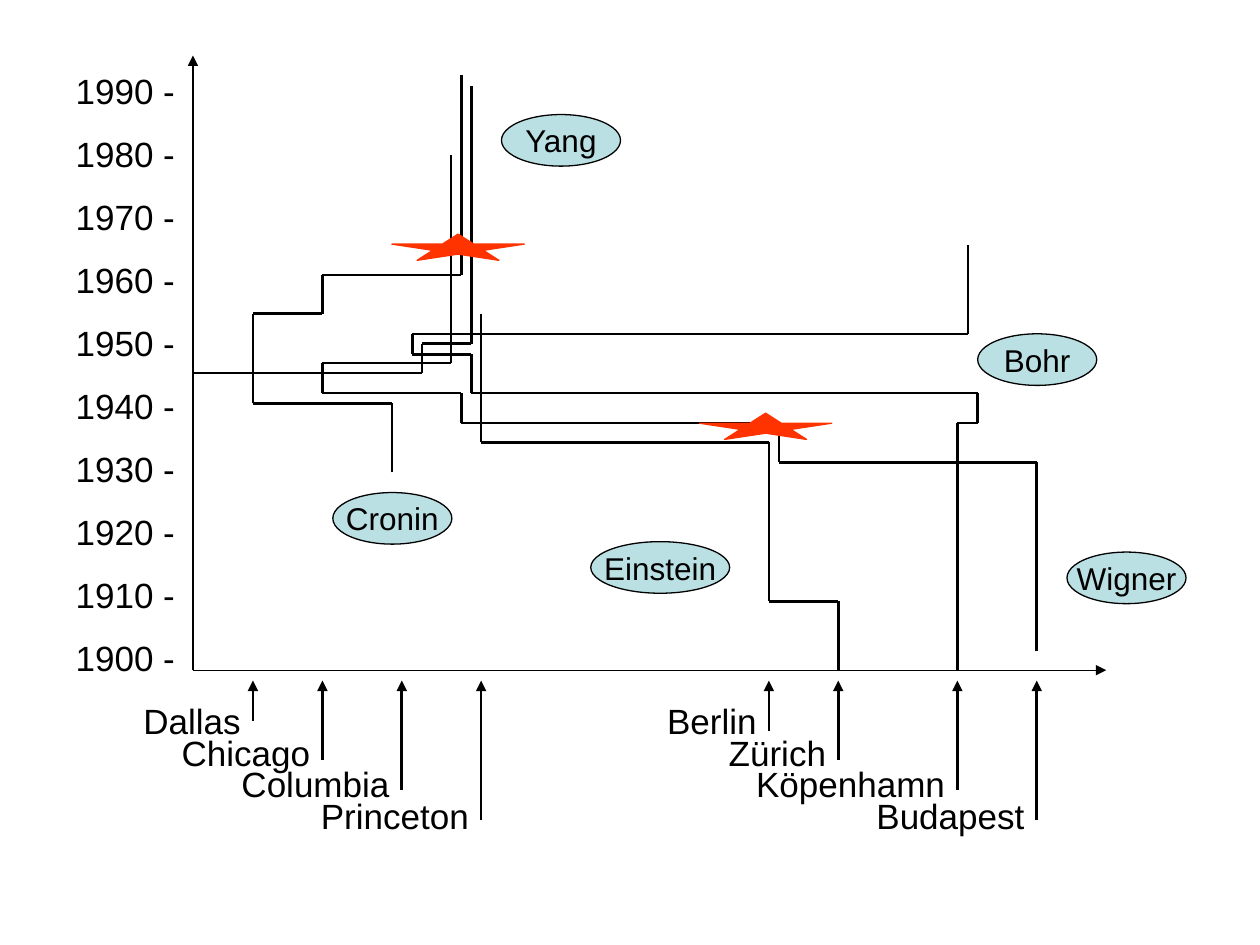
from dataclasses import dataclass

from lxml.etree import SubElement
from pptx import Presentation
from pptx.dml.color import RGBColor
from pptx.enum.shapes import MSO_CONNECTOR, MSO_SHAPE
from pptx.enum.text import MSO_ANCHOR, MSO_AUTO_SIZE, PP_ALIGN
from pptx.oxml.ns import qn
from pptx.util import Cm, Pt


@dataclass(frozen=True)
class Theme:
    font: str = "Arial"
    ink: RGBColor = RGBColor(0x00, 0x00, 0x00)
    bubble: RGBColor = RGBColor(0xBB, 0xE0, 0xE3)
    star: RGBColor = RGBColor(0xFF, 0x33, 0x00)
    label_size: Pt = Pt(20)
    name_size: Pt = Pt(18)
    row_height: Pt = Pt(18)
    thin: Pt = Pt(0.75)
    thick: Pt = Pt(1.5)


THEME = Theme()

# All lengths are in centimetres
AXIS_X, AXIS_Y = 3.89, 13.51
TEXT_LEFT = 1.52
ARROW_TIP = 13.72
LABEL_GAP = 0.25

# City: horizontal position and foot of its arrow
CITIES = {
    "Dallas": (5.1, 14.53), "Chicago": (6.5, 15.32),
    "Columbia": (8.1, 15.93), "Princeton": (9.7, 16.54),
    "Berlin": (15.5, 14.73), "Zürich": (16.9, 15.32),
    "Köpenhamn": (19.3, 15.93), "Budapest": (20.9, 16.54),
}
CITY_ROWS = [("Dallas", "Berlin"), ("Chicago", "Zürich"),
             ("Columbia", "Köpenhamn"), ("Princeton", "Budapest")]
DALLAS, CHICAGO, _, PRINCETON, BERLIN, ZURICH, COPENHAGEN, BUDAPEST = (
    x for x, _ in CITIES.values())

# Start x and y, then each next y and x in turn
ROUTES = {
    "Cronin": (7.9, 9.52, 8.13, DALLAS, 6.32, CHICAGO, 5.54, 9.3, 1.52),
    "Einstein": (ZURICH, AXIS_Y, 12.12, BERLIN, 8.92, PRINCETON, 6.32),
    "Bohr": (COPENHAGEN, AXIS_Y, 8.53, 19.71, 7.92, 9.5, 7.14, 8.31, 6.73,
             19.51, 4.93),
    "Wigner": (BUDAPEST, 13.13, 9.32, 15.7, 8.53, 9.3, 7.92, CHICAGO, 7.32,
               9.09, 3.12),
    "Yang": (9.5, 1.73, 6.93, 8.51, 7.52, AXIS_X),
}

# Name bubbles: left, top, width
BUBBLES = {
    "Bohr": (19.71, 6.73, 2.4), "Einstein": (11.91, 10.92, 2.8),
    "Cronin": (6.71, 9.93, 2.4), "Yang": (10.11, 2.31, 2.4),
    "Wigner": (21.51, 11.13, 2.4),
}
STARS = [(14.1, 8.33), (7.9, 4.72)]


def format_runs(paragraph, size):
    for run in paragraph.runs:
        run.font.name = THEME.font
        run.font.size = size
        run.font.color.rgb = THEME.ink


def add_tab_stops(paragraph, positions):
    tabs = SubElement(paragraph._p.get_or_add_pPr(), qn("a:tabLst"))
    for position in positions:
        SubElement(tabs, qn("a:tab"), pos=str(int(Cm(position))), algn="r")


def fill_labels(title):
    """Years down the axis, then the staggered city names."""
    title.left, title.top = Cm(1.27), Cm(0.86)
    title.width, title.height = Cm(22.86), Cm(17.07)
    frame = title.text_frame
    frame.auto_size = MSO_AUTO_SIZE.NONE
    frame.vertical_anchor = MSO_ANCHOR.TOP
    frame.margin_top = Cm(0.76)

    years = [f"{year} -" for year in range(1990, 1890, -10)]
    city_lines = ["\t" + "\t".join(row) for row in CITY_ROWS]
    frame.text = "\n".join(years + city_lines)
    for index, label in enumerate(frame.paragraphs):
        spaced = 0 < index <= len(years)
        label.alignment = PP_ALIGN.LEFT
        label.line_spacing = THEME.row_height
        label.space_before = THEME.row_height if spaced else Pt(0)
        format_runs(label, THEME.label_size)
    for label, row in zip(frame.paragraphs[len(years):], CITY_ROWS):
        add_tab_stops(label, [CITIES[city][0] - LABEL_GAP - TEXT_LEFT
                              for city in row])


def add_line(slide, start, end, width, arrow=False):
    line = slide.shapes.add_connector(
        MSO_CONNECTOR.STRAIGHT, *map(Cm, start), *map(Cm, end))
    line.line.color.rgb = THEME.ink
    line.line.width = width
    if arrow:
        SubElement(line.line._get_or_add_ln(), qn("a:tailEnd"), type="triangle")
    SubElement(line._element.spPr, qn("a:effectLst"))


def add_route(slide, x, y, *turns):
    """Right-angled path that begins with a vertical stretch."""
    for index, turn in enumerate(turns):
        corner = (turn, y) if index % 2 else (x, turn)
        add_line(slide, (x, y), corner, THEME.thick)
        x, y = corner


def add_filled(slide, kind, left, top, width, height, fill, outline):
    shape = slide.shapes.add_shape(kind, *map(Cm, (left, top, width, height)))
    shape.shadow.inherit = False
    shape.fill.solid()
    shape.fill.fore_color.rgb = fill
    shape.line.color.rgb = outline
    shape.line.width = THEME.thin
    return shape


def add_bubble(slide, name, left, top, width):
    bubble = add_filled(slide, MSO_SHAPE.OVAL, left, top, width, 1.04,
                        THEME.bubble, THEME.ink)
    frame = bubble.text_frame
    frame.text = name
    frame.word_wrap = False
    frame.vertical_anchor = MSO_ANCHOR.MIDDLE
    frame.paragraphs[0].alignment = PP_ALIGN.CENTER
    format_runs(frame.paragraphs[0], THEME.name_size)


def main():
    deck = Presentation()
    deck.slide_width, deck.slide_height = Cm(25.4), Cm(19.05)
    slide = deck.slides.add_slide(deck.slide_layouts[5])
    fill_labels(slide.shapes.title)

    # Axes
    origin = (AXIS_X, AXIS_Y)
    for axis_end in [(22.3, AXIS_Y), (AXIS_X, 1.12)]:
        add_line(slide, origin, axis_end, THEME.thin, arrow=True)

    # City arrows
    for x, foot in CITIES.values():
        add_line(slide, (x, foot), (x, ARROW_TIP), THEME.thick, arrow=True)

    # Physicists' journeys
    for route in ROUTES.values():
        add_route(slide, *route)

    # Names and meeting points
    for name, place in BUBBLES.items():
        add_bubble(slide, name, *place)
    for left, top in STARS:
        add_filled(slide, MSO_SHAPE.STAR_5_POINT, left, top, 2.67, 0.53,
                   THEME.star, THEME.star)

    deck.save("out.pptx")


if __name__ == "__main__":
    main()
